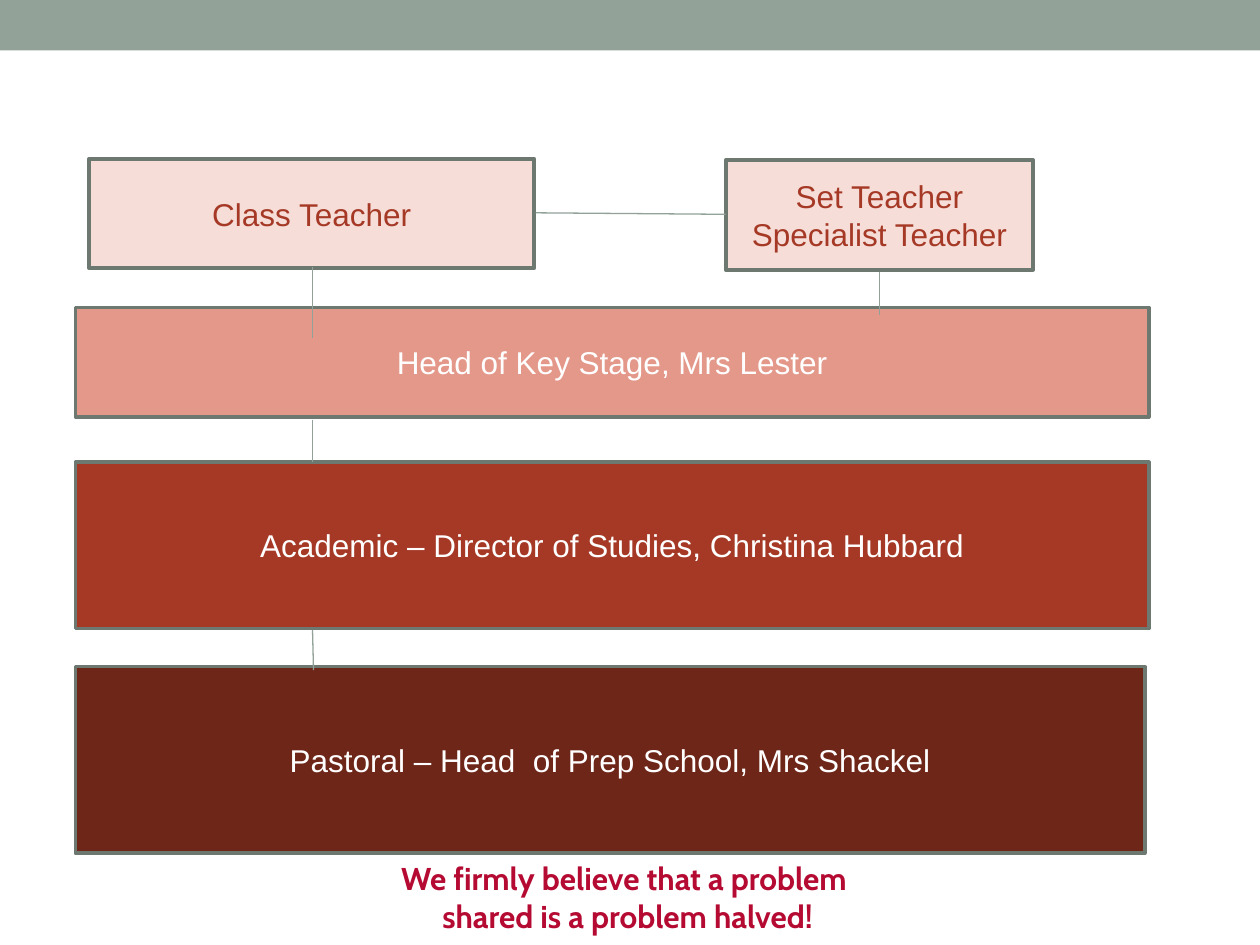
"""Build a slide showing the chain of school staff to contact with a concern."""
from pptx import Presentation
from pptx import util as u
from pptx.dml.color import RGBColor
from pptx.enum import shapes, text
from pptx.oxml.ns import qn
from lxml import etree

SAGE = RGBColor(0x93, 0xA2, 0x99)
OUTLINE = RGBColor(0x6D, 0x78, 0x71)
BLUSH = RGBColor(0xF6, 0xDD, 0xD8)
SALMON = RGBColor(0xE4, 0x98, 0x8A)
BRICK = RGBColor(0xA5, 0x39, 0x26)
MAROON = RGBColor(0x6E, 0x26, 0x19)
CRIMSON = RGBColor(0xB5, 0x0B, 0x33)
WHITE = RGBColor(0xFF, 0xFF, 0xFF)


def add_block(page, place, fill):
    block = page.shapes.add_shape(shapes.MSO_SHAPE.RECTANGLE, *map(u.Cm, place))
    block.shadow.inherit = False
    block.fill.solid()
    block.fill.fore_color.rgb = fill
    block.line.fill.background()
    return block


def write_lines(box, lines, color, font):
    frame = box.text_frame
    frame.word_wrap = True
    frame.text = "\n".join(lines)
    for para in frame.paragraphs:
        para.alignment = text.PP_ALIGN.CENTER
        for span in para.runs:
            span.font.color.rgb = color
            for name, value in font.items():
                setattr(span.font, name, value)


deck = Presentation()
deck.slide_width, deck.slide_height = u.Cm(25.4), u.Cm(19.05)
page = deck.slides.add_slide(deck.slide_layouts[6])

add_block(page, (0, 0, 25.4, 1.02), SAGE)

staff = [
    (["Class Teacher"], (1.8, 3.2, 8.97, 2.21), BLUSH, BRICK),
    (["Set Teacher", "Specialist Teacher"], (14.63, 3.23, 6.2, 2.21), BLUSH, BRICK),
    (["Head of Key Stage, Mrs Lester"], (1.52, 6.2, 21.64, 2.21), SALMON, WHITE),
    (["Academic – Director of Studies, Christina Hubbard"],
     (1.52, 9.32, 21.64, 3.35), BRICK, WHITE),
    (["Pastoral – Head  of Prep School, Mrs Shackel"],
     (1.52, 13.44, 21.56, 3.76), MAROON, WHITE),
]
for lines, place, fill, color in staff:
    box = add_block(page, place, fill)
    box.line.color.rgb = OUTLINE
    box.line.width = u.Pt(2.08)
    box.text_frame.vertical_anchor = text.MSO_ANCHOR.MIDDLE
    write_lines(box, lines, color, {"name": "Arial", "size": u.Pt(18)})

links = [
    (10.8, 4.29, 14.63, 4.32),
    (6.3, 5.38, 6.3, 6.81),
    (17.73, 5.49, 17.73, 6.35),
    (6.3, 8.46, 6.3, 9.32),
    (6.3, 12.7, 6.32, 13.51),
]
for ends in links:
    link = page.shapes.add_connector(shapes.MSO_CONNECTOR.STRAIGHT, *map(u.Cm, ends))
    link.line.color.rgb = SAGE
    link.line.width = u.Pt(0.75)
    etree.SubElement(link.element.spPr, qn("a:effectLst"))

motto = page.shapes.add_textbox(u.Cm(6.3), u.Cm(17.2), u.Cm(12.7), u.Cm(1.8))
write_lines(motto, ["We firmly believe that a problem ", "shared is a problem halved!"],
            CRIMSON, {"name": "Cabin", "size": u.Pt(18), "bold": True})

deck.save("out.pptx")
